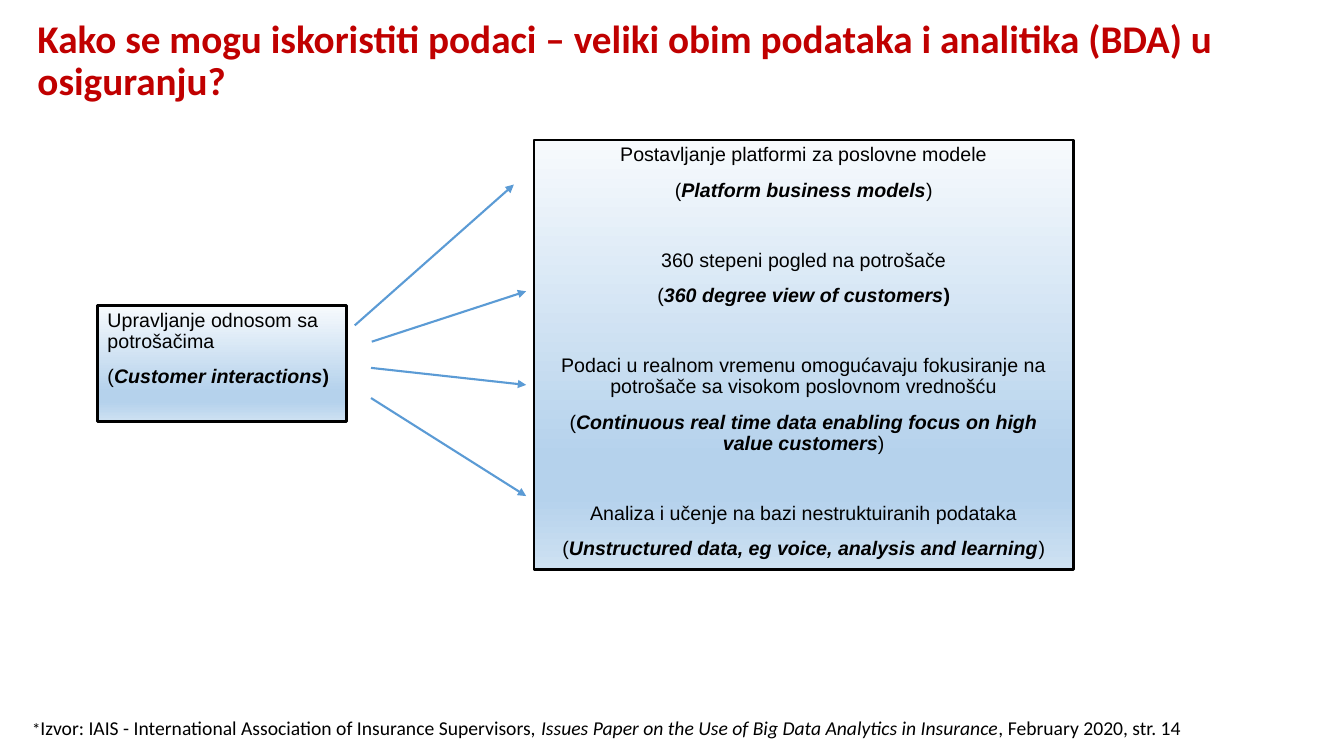
from pptx import Presentation
from pptx.dml.color import RGBColor
from pptx.enum.shapes import MSO_CONNECTOR as CONN, MSO_SHAPE as SHAPE
from pptx.enum.text import MSO_ANCHOR as ANCHOR, PP_ALIGN as ALIGN
from pptx.oxml import parse_xml
from pptx.oxml.ns import nsdecls, qn
from pptx.util import Cm, Pt

BLACK, RED, BLUE = "000000", "C00000", "5B9BD5"
GRADIENT = [(0, "F7FAFD"), (74, "B5D2EC"), (83, "B5D2EC"), (100, "CEE1F2")]

TITLE = ("Kako se mogu iskoristiti podaci – veliki obim podataka "
         "i analitika (BDA) u osiguranju?")

# Each topic: local wording, English term, whether its closing bracket is bold
SOURCE_TOPIC = [("Upravljanje odnosom sa potrošačima", "Customer interactions", True)]
USE_TOPICS = [
    ("Postavljanje platformi za poslovne modele", "Platform business models", False),
    ("360 stepeni pogled na potrošače", "360 degree view of customers", True),
    ("Podaci u realnom vremenu omogućavaju fokusiranje na potrošače "
     "sa visokom poslovnom vrednošću",
     "Continuous real time data enabling focus on high value customers", False),
    ("Analiza i učenje na bazi nestruktuiranih podataka",
     "Unstructured data, eg voice, analysis and learning", False),
]

# Arrow ends in cm: x1, y1, x2, y2
ARROWS = [
    (8.94, 8.2, 12.95, 4.65),
    (9.37, 8.61, 13.26, 7.34),
    (9.35, 9.27, 13.26, 9.7),
    (9.35, 10.03, 13.26, 12.5),
]


def color(value):
    return RGBColor.from_string(value)


def style(font, size, name, value=BLACK):
    font.size, font.name = Pt(size), name
    font.color.rgb = color(value)


def add_run(p, text, bold=None, italic=None):
    r = p.add_run()
    r.text = text
    r.font.bold, r.font.italic = bold, italic
    return r


def place(sp, box):
    sp.left, sp.top, sp.width, sp.height = (Cm(v) for v in box)


def add_title(s, box):
    sp = s.shapes.title
    place(sp, box)
    tf = sp.text_frame
    tf.word_wrap = True
    tf.vertical_anchor = ANCHOR.MIDDLE
    p = tf.paragraphs[0]
    p.alignment, p.line_spacing = ALIGN.LEFT, 0.9
    style(p.font, 28, "Calibri", RED)
    p.font.bold = True
    add_run(p, TITLE)


def fill_gradient(sp):
    sp.fill.gradient()
    sp.fill.gradient_angle = 270
    stops = sp._element.spPr.find(qn("a:gradFill")).find(qn("a:gsLst"))
    for gs in list(stops):
        stops.remove(gs)
    for pos, value in GRADIENT:
        stops.append(parse_xml(
            f'<a:gs {nsdecls("a")} pos="{pos * 1000}">'
            f'<a:srgbClr val="{value}"/></a:gs>'))


def add_topic_box(s, box, topics, align):
    sp = s.shapes.add_shape(SHAPE.RECTANGLE, *(Cm(v) for v in box))
    sp.shadow.inherit = False
    fill_gradient(sp)
    sp.line.color.rgb = color(BLACK)
    sp.line.width = Pt(1.75)
    tf = sp.text_frame
    tf.word_wrap = True
    tf.vertical_anchor = ANCHOR.TOP
    for i, (local, english, bold_end) in enumerate(topics):
        heading = tf.add_paragraph() if i else tf.paragraphs[0]
        term = tf.add_paragraph()
        for p, before in ((heading, 35 if i else 10), (term, 10)):
            p.alignment, p.line_spacing = align, 0.9
            p.space_before = Pt(before)
            style(p.font, 14, "Arial")
        add_run(heading, local)
        add_run(term, "(")
        add_run(term, english, True, True)
        add_run(term, ")", bold_end)


def add_arrow(s, ends):
    c = s.shapes.add_connector(CONN.STRAIGHT, *(Cm(v) for v in ends))
    c.line.color.rgb = color(BLUE)
    c.line.width = Pt(1.5)
    c.line._get_or_add_ln().append(
        parse_xml(f'<a:tailEnd {nsdecls("a")} type="triangle"/>'))
    c._element.spPr.append(parse_xml(f'<a:effectLst {nsdecls("a")}/>'))


def add_source_note(s, box):
    tf = s.shapes.add_textbox(*(Cm(v) for v in box)).text_frame
    tf.word_wrap = True
    p = tf.paragraphs[0]
    p.line_spacing, p.space_after = 1.07, Pt(8)
    style(p.font, 14, "Calibri")
    add_run(p, "*").font.size = Pt(12)
    add_run(p, "Izvor: IAIS - International Association of Insurance Supervisors, ")
    add_run(p, "Issues Paper on the Use of Big Data Analytics in Insurance", italic=True)
    add_run(p, ", February 2020, str. 14")


def main():
    prs = Presentation()
    prs.slide_width, prs.slide_height = Cm(33.87), Cm(19.05)
    s = prs.slides.add_slide(prs.slide_layouts[5])

    # Title
    add_title(s, (0.69, 1.02, 32.89, 1.07))

    # Starting point and the uses it leads to
    add_topic_box(s, (2.46, 7.7, 6.27, 2.92), SOURCE_TOPIC, ALIGN.LEFT)
    add_topic_box(s, (13.46, 3.53, 13.59, 10.82), USE_TOPICS, ALIGN.CENTER)
    for ends in ARROWS:
        add_arrow(s, ends)

    # Source line
    add_source_note(s, (0.56, 17.88, 32.28, 0.89))

    prs.save("out.pptx")


if __name__ == "__main__":
    main()
